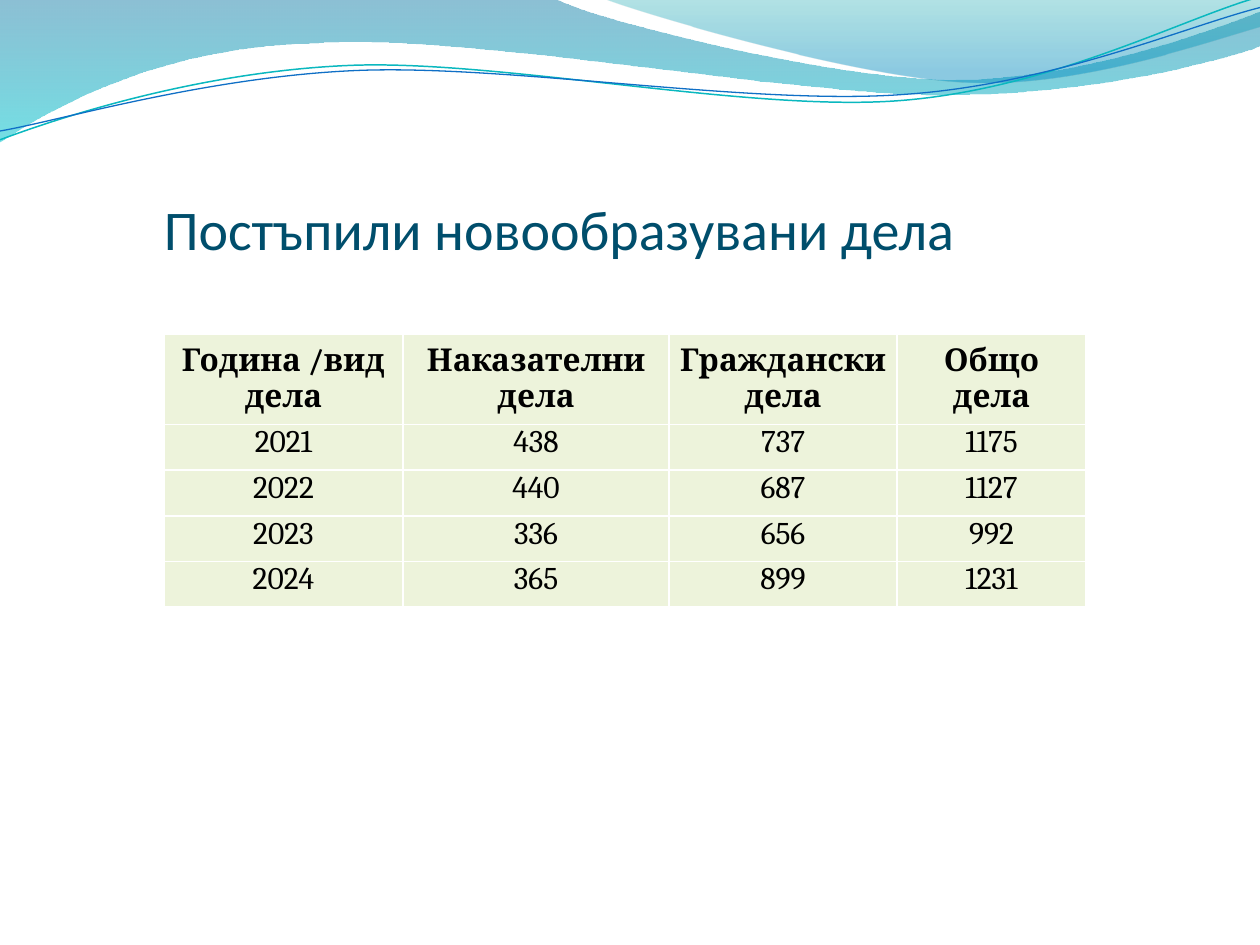
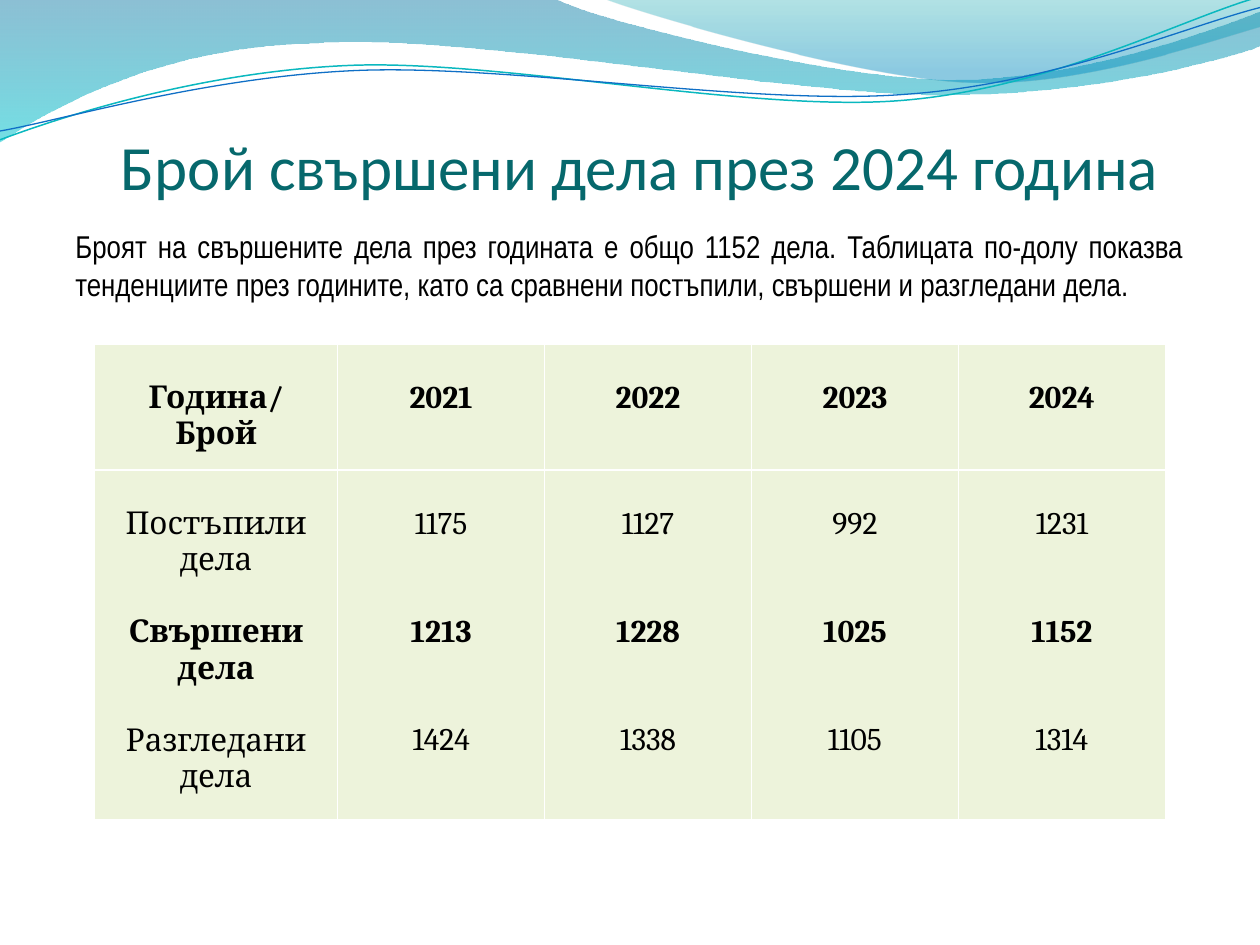
from dataclasses import dataclass

from lxml import etree
from pptx import Presentation
from pptx.dml.color import RGBColor
from pptx.enum.text import MSO_ANCHOR, MSO_AUTO_SIZE, PP_ALIGN
from pptx.oxml.ns import qn
from pptx.util import Inches, Pt

CENTER, LEFT, JUSTIFY = PP_ALIGN.CENTER, PP_ALIGN.LEFT, PP_ALIGN.JUSTIFY
TOP, MIDDLE, BOTTOM = MSO_ANCHOR.TOP, MSO_ANCHOR.MIDDLE, MSO_ANCHOR.BOTTOM
NO_AUTOFIT = MSO_AUTO_SIZE.NONE


@dataclass(frozen=True)
class Theme:
    title_font: str = "Calibri"
    body_font: str = "Arial Narrow"
    table_font: str = "Cambria"
    text_size: int = 18
    table_line: float = 20.5
    text: str = "000000"
    cell: str = "EDF3DB"
    border: str = "FFFFFF"
    blue_title: str = "004E6C"
    teal_title: str = "06686C"


theme = Theme()


def add_run(paragraph, text, font, size, color, bold=False):
    run = paragraph.add_run()
    run.text = text
    run.font.name = font
    run.font.size = Pt(size)
    run.font.bold = bold
    run.font.color.rgb = RGBColor.from_string(color)


def style_cell(cell, texts, top_gap=0, gap=0, anchor=TOP):
    """Fill a cell with (text, bold) paragraphs and draw its borders."""
    cell.fill.solid()
    cell.fill.fore_color.rgb = RGBColor.from_string(theme.cell)
    cell.margin_left = cell.margin_right = Inches(0.05)
    cell.margin_top, cell.margin_bottom = Pt(top_gap), 0
    cell.vertical_anchor = anchor
    frame = cell.text_frame
    for index, (text, bold) in enumerate(texts):
        paragraph = frame.add_paragraph() if index else frame.paragraphs[0]
        paragraph.alignment = CENTER
        if index:
            paragraph.space_before = Pt(gap)
        add_run(paragraph, text, theme.table_font, theme.text_size, theme.text, bold)
    properties = cell.fill._xPr
    for index, side in enumerate(("a:lnL", "a:lnR", "a:lnT", "a:lnB")):
        border = etree.Element(qn(side), w=str(Pt(1)))
        solid = etree.SubElement(border, qn("a:solidFill"))
        etree.SubElement(solid, qn("a:srgbClr"), val=theme.border)
        properties.insert(index, border)


presentation = Presentation()
presentation.slide_width, presentation.slide_height = Inches(10), Inches(7.5)
layout = presentation.slide_layouts[5]
for placeholder in list(layout.placeholders)[1:]:
    layout.shapes.element.remove(placeholder.element)

# Titles
titles = [
    ("Постъпили новообразувани дела", 32, theme.blue_title, (1.3, 1.31, 7.09, 0.77)),
    ("Брой свършени дела през 2024 година", 36, theme.teal_title, (0.96, 0.36, 8.55, 1.25)),
]
slides = []
for text, size, color, box in titles:
    slide = presentation.slides.add_slide(layout)
    title = slide.shapes.title
    title.left, title.top, title.width, title.height = map(Inches, box)
    frame = title.text_frame
    frame.auto_size = NO_AUTOFIT
    frame.word_wrap = True
    frame.vertical_anchor = BOTTOM
    frame.margin_left = frame.margin_right = frame.margin_bottom = 0
    frame.margin_top = Inches(0.05)
    frame.paragraphs[0].alignment = LEFT
    add_run(frame.paragraphs[0], text, theme.title_font, size, color)
    slides.append(slide)
filed_slide, closed_slide = slides

# Wave band: one point is a straight step, three points are a Bezier curve
waves = [
    {"stops": [(0, "0074A1", 45), (1, "00C6CF", 55)], "start": (0, 0), "steps": [
        [(4.4, -0.01)],
        [(4.76, 0.17), (6.64, 0.63), (7.58, 0.63)],
        [(8.53, 0.63), (9.58, 0.26), (10, 0.09)],
        [(10.01, 0.36)],
        [(9.83, 0.44), (8.7, 0.76), (7.46, 0.75)],
        [(6.22, 0.75), (3.82, 0.28), (2.57, 0.34)],
        [(1.29, 0.36), (0.46, 0.83), (-0.01, 1.13)]]},
    {"stops": [(0, "00A1A9", 30), (0.8, "008BBF", 45)], "start": (4.79, -0.01), "steps": [
        [(5.09, 0.11), (6.82, 0.62), (7.69, 0.65)],
        [(8.56, 0.69), (9.61, 0.32), (10, 0.21)],
        [(10, 0)]]},
    {"line": ("0AB8BF", 0.85), "start": (0, 1.11), "steps": [
        [(0.48, 0.93), (1.58, 0.57), (2.77, 0.52)],
        [(3.95, 0.47), (5.93, 0.89), (7.13, 0.8)],
        [(8.33, 0.71), (9.38, 0.15), (9.98, -0.02)]]},
    {"line": ("0F6FC6", 0.75), "start": (0, 1.04), "steps": [
        [(0.47, 0.96), (1.64, 0.61), (2.83, 0.56)],
        [(4.03, 0.51), (5.97, 0.84), (7.17, 0.75)],
        [(8.36, 0.67), (9.41, 0.21), (10, 0.06)]]},
]
wave_shapes = []
for wave in waves:
    start_x, start_y = wave["start"]
    builder = filed_slide.shapes.build_freeform(Inches(start_x), Inches(start_y))
    builder.add_line_segments([(Inches(x), Inches(y)) for step in wave["steps"] for x, y in step],
                              close="stops" in wave)
    shape = builder.convert_to_shape()
    shape.shadow.inherit = False

    # Join each three straight segments of a curve into one Bezier segment
    segments = iter(list(shape.element.spPr.iter(qn("a:lnTo"))))
    for step in wave["steps"]:
        first, *others = [next(segments) for point in step]
        if others:
            curve = etree.Element(qn("a:cubicBezTo"))
            first.addprevious(curve)
            for segment in (first, *others):
                curve.append(segment[0])
                segment.getparent().remove(segment)

    if "stops" in wave:
        shape.line.fill.background()
        shape.fill.gradient()
        shape.fill.gradient_angle = 270
        for stop, (position, color, opacity) in zip(shape.fill.gradient_stops, wave["stops"]):
            stop.position = position
            stop.color.rgb = RGBColor.from_string(color)
        colors = shape.element.spPr.iter(qn("a:srgbClr"))
        for color_element, (position, color, opacity) in zip(colors, wave["stops"]):
            etree.SubElement(color_element, qn("a:alpha"), val=str(opacity * 1000))
    else:
        color, width = wave["line"]
        shape.fill.background()
        shape.line.color.rgb = RGBColor.from_string(color)
        shape.line.width = Pt(width)
    wave_shapes.append(shape)

# The layout carries the band for every slide
for shape in wave_shapes:
    layout.shapes.element.append(shape.element)

# Slide 1: filed cases
filed_rows = [
    ("Година /вид дела", "Наказателни дела", "Граждански дела", "Общо дела"),
    ("2021", "438", "737", "1175"),
    ("2022", "440", "687", "1127"),
    ("2023", "336", "656", "992"),
    ("2024", "365", "899", "1231"),
]
filed_table = filed_slide.shapes.add_table(
    5, 4, Inches(1.3), Inches(2.65), Inches(7.32), Inches(2.17)).table
for column, width in zip(filed_table.columns, (1.9, 2.11, 1.81, 1.5)):
    column.width = Inches(width)
for row_index, values in enumerate(filed_rows):
    is_header = row_index == 0
    filed_table.rows[row_index].height = Inches(0.72 if is_header else (2.17 - 0.72) / 4)
    for column_index, value in enumerate(values):
        style_cell(filed_table.cell(row_index, column_index), [(value, is_header)],
                   anchor=MIDDLE if is_header else TOP)

# Slide 2: introduction
introduction = closed_slide.shapes.add_textbox(Inches(0.5), Inches(1.75), Inches(8.99), Inches(5.39))
introduction.text_frame.word_wrap = True
paragraph = introduction.text_frame.paragraphs[0]
paragraph.alignment = JUSTIFY
add_run(paragraph, "Броят на свършените дела през годината е общо 1152 дела. Таблицата по-долу показва "
        "тенденциите през годините, като са сравнени постъпили, свършени и разгледани дела.",
        theme.body_font, theme.text_size, theme.text)

# Slide 2: filed, closed and examined cases by year
closed_columns = [
    (("Година/", "Брой"), ("Постъпили дела", "Свършени дела", "Разгледани дела")),
    (("2021",), ("1175", "1213", "1424")),
    (("2022",), ("1127", "1228", "1338")),
    (("2023",), ("992", "1025", "1105")),
    (("2024",), ("1231", "1152", "1314")),
]
closed_table = closed_slide.shapes.add_table(
    2, 5, Inches(0.75), Inches(2.73), Inches(8.5), Inches(3.78)).table
for row, height in zip(closed_table.rows, (1, 2.78)):
    row.height = Inches(height)
for column_index, (heading, values) in enumerate(closed_columns):
    is_label = column_index == 0
    closed_table.columns[column_index].width = Inches(1.93 if is_label else (8.5 - 1.93) / 4)
    style_cell(closed_table.cell(0, column_index), [(line, True) for line in heading],
               top_gap=theme.table_line)
    # Labels wrap to two lines, so numbers need one more line of space
    style_cell(closed_table.cell(1, column_index),
               [(value, index == 1) for index, value in enumerate(values)],
               top_gap=theme.table_line, gap=theme.table_line * (1 if is_label else 2))

presentation.save("out.pptx")
